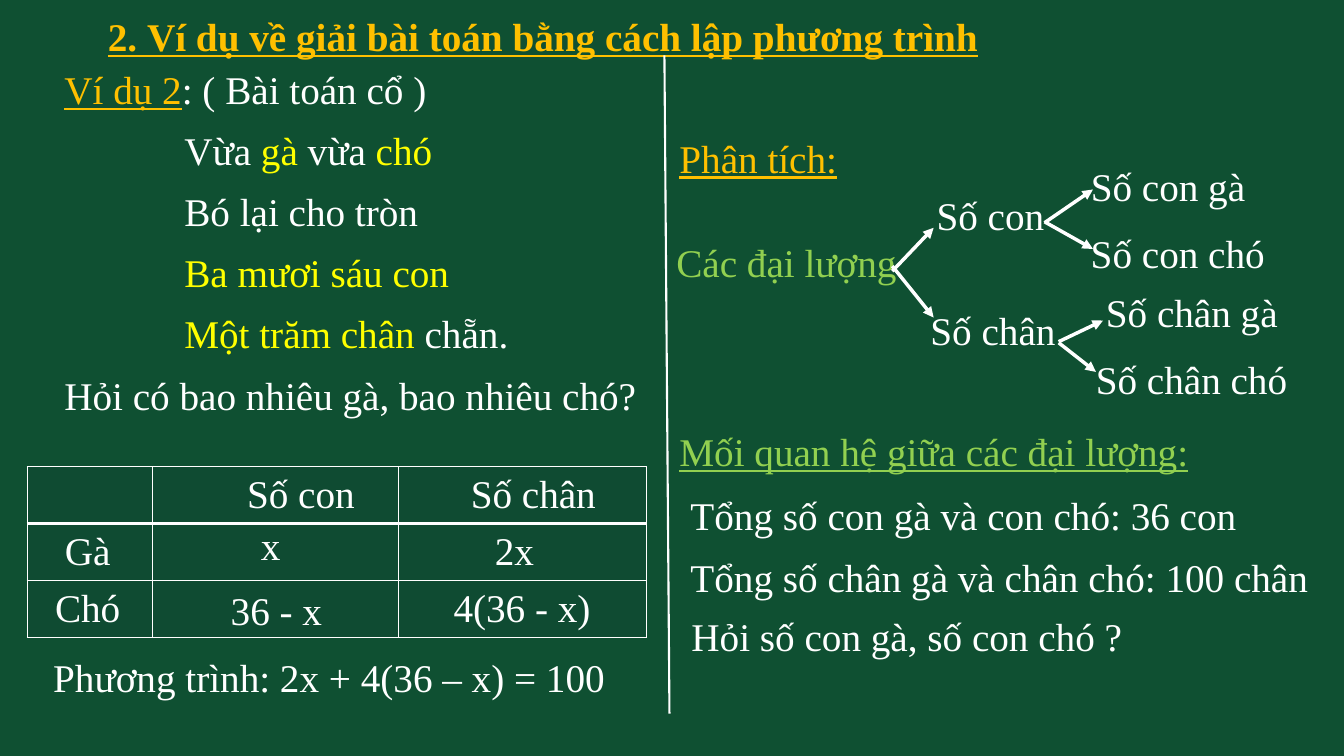
from lxml.etree import SubElement
from pptx import Presentation
from pptx.dml.color import RGBColor
from pptx.enum.shapes import MSO_CONNECTOR
from pptx.enum.text import MSO_ANCHOR, MSO_AUTO_SIZE, PP_ALIGN
from pptx.oxml.ns import qn
from pptx.util import Inches, Pt

BOARD = RGBColor(0x0F, 0x50, 0x32)
CELL = RGBColor(0x0F, 0x4B, 0x32)
WHITE = RGBColor(0xFF, 0xFF, 0xFF)
GOLD = RGBColor(0xFF, 0xC0, 0x00)
GREEN = RGBColor(0x92, 0xD0, 0x50)
YELLOW = RGBColor(0xFF, 0xFF, 0x00)
FONT = "Times New Roman"
GRID = Inches(0.1)
LINE_ROWS = 5.7
VERSE_INDENT = 11.9

PROBLEM = [
    (0, [("Ví dụ 2", GOLD, True), (": ( Bài toán cổ )", WHITE)]),
    (VERSE_INDENT, [("Vừa ", WHITE), ("gà", YELLOW), (" vừa ", WHITE), ("chó", YELLOW)]),
    (VERSE_INDENT, [("Bó lại cho tròn", WHITE)]),
    (VERSE_INDENT, [("Ba mươi sáu con", YELLOW)]),
    (VERSE_INDENT, [("Một trăm chân", YELLOW), (" chẵn.", WHITE)]),
    (0, [("Hỏi có bao nhiêu gà, bao nhiêu chó?", WHITE)]),
]
LABELS = [
    (66.4, 12.8, 60.5, "Phân tích:", GOLD, True),
    (66.1, 23.2, 29.4, "Các đại lượng", GREEN),
    (91.9, 18.5, 15.8, "Số con", WHITE),
    (91.3, 29.9, 16.4, "Số chân", WHITE),
    (107.2, 15.6, 21.1, "Số con gà", WHITE),
    (107.2, 22.3, 23, "Số con chó", WHITE),
    (108.7, 28.1, 23.8, "Số chân gà", WHITE),
    (107.7, 34.8, 23.8, "Số chân chó", WHITE),
    (66.4, 41.9, 58.7, "Mối quan hệ giữa các đại lượng:", GREEN, True),
    (67.5, 48.3, 65.5, "Tổng số con gà và con chó: 36 con", WHITE),
    (67.5, 54.4, 65.5, "Tổng số chân gà và chân chó: 100 chân", WHITE),
    (67.6, 60.3, 62.6, "Hỏi số con gà, số con chó ?", WHITE),
    (4.3, 64.3, 60.3, "Phương trình: 2x + 4(36 – x) = 100", WHITE),
    (24.9, 51.2, 6.3, "x", WHITE),
    (48.1, 51.7, 8, "2x", WHITE),
    (21.9, 57.7, 13, "36 - x", WHITE),
    (44, 57.4, 20.7, "4(36 - x)", WHITE),
]
CENTERED_LABELS = [
    (22.1, 46.1, 15.5, "Số con", WHITE),
    (45.6, 46.1, 14.6, "Số chân", WHITE),
    (5.2, 51.7, 7, "Gà", WHITE),
    (4.2, 57.4, 9, "Chó", WHITE),
]
ARROWS = [
    (88.5, 26.9, 92.6, 22.6),
    (88.5, 26.4, 92.6, 31.5),
    (103.6, 22.1, 108.4, 18.8),
    (103.6, 22, 108.4, 24.7),
    (105, 33.9, 109.4, 31.8),
    (105, 34, 108.7, 36.9),
]
TABLE_COLUMNS = [12.4, 24.4, 24.6]
TABLE_ROWS = [5.65] * 3


def grid(count):
    """Turn a number of grid columns or rows into a length."""
    return int(count * GRID)


def add_run(paragraph, text, color, underline=False, bold=False):
    """Add one formatted run to a paragraph."""
    run = paragraph.add_run()
    run.text = text
    run.font.name = FONT
    run.font.size = Pt(28)
    run.font.color.rgb = color
    run.font.underline = underline
    run.font.bold = bold


def add_text(slide, left, top, width, paragraphs, alignment=PP_ALIGN.LEFT):
    """Add a text box holding indented paragraphs made of runs."""
    height = LINE_ROWS + 6.1 * (len(paragraphs) - 1)
    box = slide.shapes.add_textbox(grid(left), grid(top), grid(width), grid(height))
    frame = box.text_frame
    frame.word_wrap = True
    frame.auto_size = MSO_AUTO_SIZE.SHAPE_TO_FIT_TEXT
    for number, (indent, runs) in enumerate(paragraphs):
        paragraph = frame.add_paragraph() if number else frame.paragraphs[0]
        paragraph.alignment = alignment
        if number:
            paragraph.space_before = Pt(10)
        if indent:
            paragraph._p.get_or_add_pPr().set("marL", str(grid(indent)))
        for run in runs:
            add_run(paragraph, *run)


def add_labels(slide, labels, alignment):
    """Add one-line text boxes that share an alignment."""
    for left, top, width, *run in labels:
        add_text(slide, left, top, width, [(0, [run])], alignment)


def add_title(slide):
    """Place and format the title placeholder."""
    title = slide.shapes.title
    title.left, title.top = grid(9.7), grid(0.7)
    title.width, title.height = grid(104.7), grid(LINE_ROWS)
    frame = title.text_frame
    frame.auto_size = MSO_AUTO_SIZE.NONE
    frame.vertical_anchor = MSO_ANCHOR.TOP
    paragraph = frame.paragraphs[0]
    paragraph.alignment = PP_ALIGN.LEFT
    add_run(paragraph, "2.", GOLD, True, True)
    add_run(paragraph, " ", GOLD, True)
    add_run(paragraph, "Ví dụ về giải bài toán bằng cách lập phương trình", GOLD, True, True)


def add_line(slide, ends, weight, arrow=False):
    """Draw a straight white line, with an arrowhead if asked."""
    connector = slide.shapes.add_connector(MSO_CONNECTOR.STRAIGHT, *map(grid, ends))
    connector.line.color.rgb = WHITE
    connector.line.width = Pt(weight)
    properties = connector._element.spPr
    if arrow:
        SubElement(properties.find(qn("a:ln")), qn("a:tailEnd"), type="triangle")
    SubElement(properties, qn("a:effectLst"))


def add_border(cell, side, weight):
    """Draw a white border on one side of a cell."""
    properties = cell._tc.get_or_add_tcPr()
    border = SubElement(properties, qn(f"a:ln{side}"), w=str(Pt(weight)))
    fill = SubElement(border, qn("a:solidFill"))
    SubElement(fill, qn("a:srgbClr"), val=str(WHITE))


def add_quantity_table(slide):
    """Add the ruled table behind the quantities."""
    frame = slide.shapes.add_table(
        len(TABLE_ROWS), len(TABLE_COLUMNS), grid(2.7), grid(46.3),
        grid(sum(TABLE_COLUMNS)), grid(sum(TABLE_ROWS)))
    table = frame.table
    table.horz_banding = False
    for column, width in zip(table.columns, TABLE_COLUMNS):
        column.width = grid(width)
    for number, (row, height) in enumerate(zip(table.rows, TABLE_ROWS)):
        row.height = grid(height)
        for cell in row.cells:
            for side in "LRTB":
                add_border(cell, side, 3 if number == 0 and side == "B" else 1)
            cell.fill.solid()
            cell.fill.fore_color.rgb = CELL


def main():
    """Build the slide and save it."""
    presentation = Presentation()
    presentation.slide_width, presentation.slide_height = Inches(13.33), Inches(7.5)
    slide = presentation.slides.add_slide(presentation.slide_layouts[5])
    slide.background.fill.solid()
    slide.background.fill.fore_color.rgb = BOARD
    add_title(slide)
    add_text(slide, 5.4, 6, 58.7, PROBLEM)
    add_line(slide, (65.9, 5.5, 66.4, 70.8), 1.5)
    add_quantity_table(slide)
    add_labels(slide, LABELS, PP_ALIGN.LEFT)
    add_labels(slide, CENTERED_LABELS, PP_ALIGN.CENTER)
    for ends in ARROWS:
        add_line(slide, ends, 2.5, arrow=True)
    presentation.save("out.pptx")


if __name__ == "__main__":
    main()
